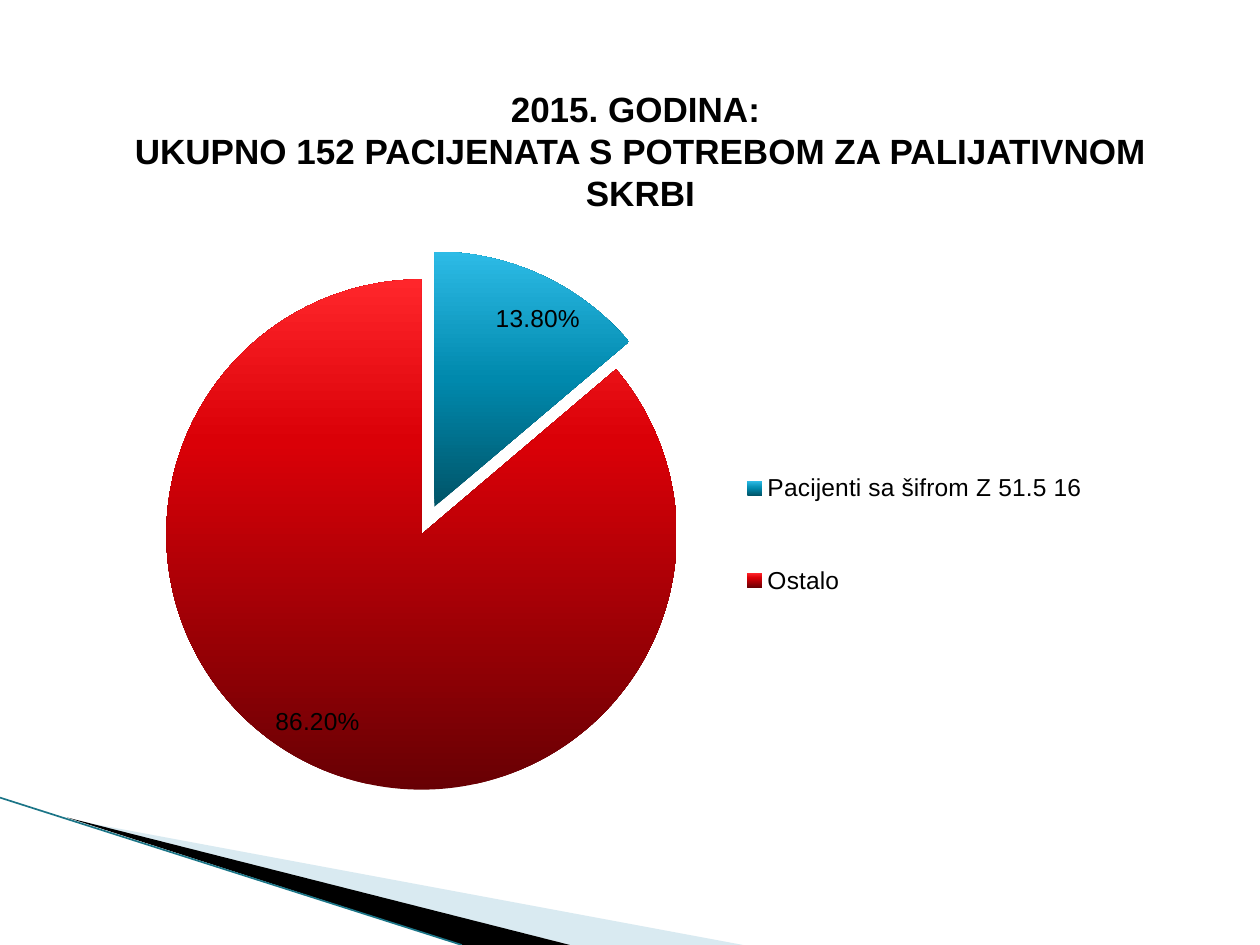
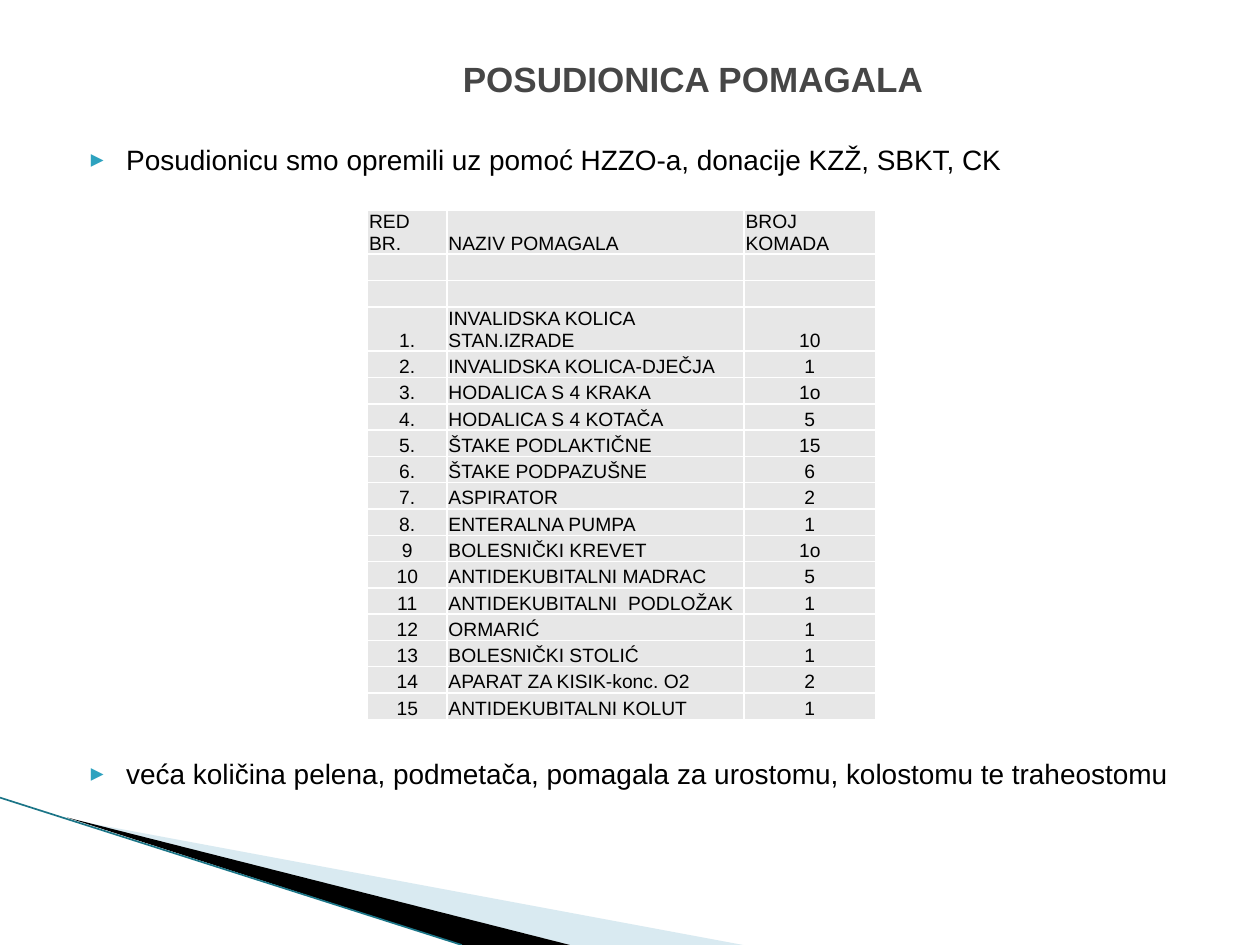
from copy import deepcopy
from dataclasses import dataclass

from lxml import etree
from pptx import Presentation
from pptx.chart.data import CategoryChartData
from pptx.dml.color import RGBColor
from pptx.enum.chart import XL_CHART_TYPE, XL_LABEL_POSITION, XL_LEGEND_POSITION
from pptx.enum.shapes import MSO_CONNECTOR
from pptx.enum.text import MSO_ANCHOR, MSO_AUTO_SIZE, PP_ALIGN
from pptx.oxml.ns import qn
from pptx.util import Cm, Pt

PIE = XL_CHART_TYPE.PIE
BEST_FIT = XL_LABEL_POSITION.BEST_FIT
LEGEND_RIGHT = XL_LEGEND_POSITION.RIGHT
STRAIGHT = MSO_CONNECTOR.STRAIGHT
MIDDLE = MSO_ANCHOR.MIDDLE
TOP = MSO_ANCHOR.TOP
BOTTOM = MSO_ANCHOR.BOTTOM
NO_AUTOFIT = MSO_AUTO_SIZE.NONE
LEFT = PP_ALIGN.LEFT
CENTER = PP_ALIGN.CENTER
TITLE_ONLY = 5
TITLE_AND_CONTENT = 1


@dataclass(frozen=True)
class Theme:
    font: str = "Arial"
    bullet_font: str = "DejaVu Sans Mono"
    title_size: int = 20
    body_size: int = 16
    chart_size: int = 14
    table_size: int = 11
    black: str = "000000"
    gray: str = "464646"
    white: str = "FFFFFF"
    cell: str = "E7E7E7"
    bullet: str = "2DA2BF"
    pale_wedge: str = "A0CBDC"
    edge: str = "1B7587"
    blue_slice: tuple = ((0, "005468"), (0.5, "0089AD"), (1, "2DBBE6"))
    red_slice: tuple = ((0, "680004"), (0.68, "DA0007"), (1, "FF262B"))


THEME = Theme()

AIDS = [
    ("RED BR.", "NAZIV POMAGALA", "BROJ KOMADA"),
    ("", "", ""),
    ("", "", ""),
    ("1.", "INVALIDSKA KOLICA STAN.IZRADE", "10"),
    ("2.", "INVALIDSKA KOLICA-DJEČJA", "1"),
    ("3.", "HODALICA S 4 KRAKA", "1o"),
    ("4.", "HODALICA S 4 KOTAČA", "5"),
    ("5.", "ŠTAKE PODLAKTIČNE", "15"),
    ("6.", "ŠTAKE PODPAZUŠNE", "6"),
    ("7.", "ASPIRATOR", "2"),
    ("8.", "ENTERALNA PUMPA", "1"),
    ("9", "BOLESNIČKI KREVET", "1o"),
    ("10", "ANTIDEKUBITALNI MADRAC", "5"),
    ("11", "ANTIDEKUBITALNI  PODLOŽAK", "1"),
    ("12", "ORMARIĆ", "1"),
    ("13", "BOLESNIČKI STOLIĆ", "1"),
    ("14", "APARAT ZA KISIK-konc. O2", "2"),
    ("15", "ANTIDEKUBITALNI KOLUT", "1"),
]
TWO_LINE_ROWS = (0, 3)


def rgb(color):
    return RGBColor.from_string(color)


def add_xml(parent, tag, **attributes):
    return etree.SubElement(parent, qn(tag), attributes)


def write(para, text, size, color=THEME.black, bold=False, align=LEFT,
          before=0, line_spacing=None):
    para.alignment = align
    para.space_before = Pt(before)
    if line_spacing:
        para.line_spacing = Pt(line_spacing)
    if not text:
        add_xml(para._p, "a:endParaRPr", sz=str(size * 100))
        return
    for number, line in enumerate(text.split("\n")):
        if number:
            para.add_line_break()
        span = para.add_run()
        span.text = line
        span.font.name = THEME.font
        span.font.size = Pt(size)
        span.font.bold = bold
        span.font.color.rgb = rgb(color)


def place(box, left, top, width, height, anchor):
    box.left, box.top = Cm(left), Cm(top)
    box.width, box.height = Cm(width), Cm(height)
    frame = box.text_frame
    frame.word_wrap = True
    frame.auto_size = NO_AUTOFIT
    frame.vertical_anchor = anchor
    return frame


def set_title(page, text, left, top, width, height, color, bottom_inset=0.13):
    frame = place(page.shapes.title, left, top, width, height, MIDDLE)
    frame.margin_bottom = Cm(bottom_inset)
    write(frame.paragraphs[0], text, THEME.title_size, color=color, bold=True,
          align=CENTER, line_spacing=24)


def add_bullet(para):
    settings = para._p.get_or_add_pPr()
    settings.set("marL", str(Cm(1.02)))
    settings.set("indent", str(-Cm(0.71)))
    color = add_xml(settings, "a:buClr")
    add_xml(color, "a:srgbClr", val=THEME.bullet)
    add_xml(settings, "a:buSzPct", val="76000")
    add_xml(settings, "a:buFont", typeface=THEME.bullet_font)
    add_xml(settings, "a:buChar", char="▶")


def set_bullets(page, items):
    frame = place(page.placeholders[1], 1.27, 2.74, 22.86, 13.94, TOP)
    for number, (text, before) in enumerate(items):
        para = frame.add_paragraph() if number else frame.paragraphs[0]
        add_bullet(para)
        write(para, text, THEME.body_size, before=before)


def add_wedge(page, points, color, opacity=100):
    corners = [(Cm(x), Cm(y)) for x, y in points]
    builder = page.shapes.build_freeform(*corners[0])
    builder.add_line_segments(corners[1:], close=True)
    wedge = builder.convert_to_shape()
    wedge.shadow.inherit = False
    wedge.line.fill.background()
    wedge.fill.solid()
    wedge.fill.fore_color.rgb = rgb(color)
    shade = wedge._element.spPr.find(".//" + qn("a:srgbClr"))
    add_xml(shade, "a:alpha", val=str(opacity * 1000))


def add_corner(page):
    add_wedge(page, [(1.4, 16.52), (14.98, 19.05), (11.49, 19.05)],
              THEME.pale_wedge, opacity=40)
    add_wedge(page, [(1.35, 16.48), (11.49, 19.05), (9.31, 19.05)], THEME.black)
    edge = page.shapes.add_connector(STRAIGHT, Cm(0), Cm(16.08), Cm(9.31), Cm(19.05))
    edge.line.color.rgb = rgb(THEME.edge)
    edge.line.width = Pt(0.95)
    add_xml(edge._element.spPr, "a:effectLst")


def add_page(deck, layout):
    page = deck.slides.add_slide(deck.slide_layouts[layout])
    add_corner(page)
    for box in list(page.placeholders):
        page.shapes._spTree.append(box._element)
    return page


def set_layout(parent, index, target=None, **fractions):
    for old in parent.findall(qn("c:layout")):
        parent.remove(old)
    layout = etree.Element(qn("c:layout"))
    manual = add_xml(layout, "c:manualLayout")
    if target:
        add_xml(manual, "c:layoutTarget", val=target)
    for mode in ("xMode", "yMode"):
        add_xml(manual, "c:" + mode, val="edge")
    for name, value in fractions.items():
        add_xml(manual, "c:" + name, val=str(value))
    parent.insert(index, layout)


def fill_slice(point, shades):
    fill = point.format.fill
    fill.gradient()
    fill.gradient_angle = 90
    stops = fill._xPr.find(".//" + qn("a:gsLst"))
    stops.append(deepcopy(stops[0]))
    for stop, (position, color) in zip(fill.gradient_stops, shades):
        stop.position = position
        stop.color.rgb = rgb(color)


def set_font(font, size):
    font.name = THEME.font
    font.size = Pt(size)
    font.color.rgb = rgb(THEME.black)


def add_patient_pie(page):
    data = CategoryChartData(number_format="0.00%")
    data.categories = ["Pacijenti sa šifrom Z 51.5 16", "Ostalo"]
    data.add_series("Series 1", (0.138, 0.862))
    chart = page.shapes.add_chart(
        PIE, Cm(0.84), Cm(4.24), Cm(22.86), Cm(12.57), data).chart
    chart.has_title = False
    set_font(chart.font, THEME.chart_size)

    plot = chart.plots[0]
    plot.vary_by_categories = True
    series = plot.series[0]
    for number, shades in enumerate((THEME.blue_slice, THEME.red_slice)):
        fill_slice(series.points[number], shades)
    patients = series._element.find(qn("c:dPt"))
    explosion = etree.Element(qn("c:explosion"), val="12")
    patients.find(qn("c:spPr")).addprevious(explosion)

    plot.has_data_labels = True
    labels = plot.data_labels
    labels.show_value = True
    labels.show_percentage = False
    labels.number_format = "0.00%"
    labels.number_format_is_linked = False
    labels.position = BEST_FIT
    set_font(labels.font, THEME.chart_size)

    chart.has_legend = True
    legend = chart.legend
    legend.position = LEGEND_RIGHT
    legend.include_in_layout = False
    set_font(legend.font, THEME.chart_size)
    set_layout(legend._element, 1, x=0.59, y=0.32, w=0.36, h=0.4)
    plot_area = chart._chartSpace.find(".//" + qn("c:plotArea"))
    set_layout(plot_area, 0, target="inner", x=0.11, y=0.11, w=0.45, h=0.82)


def set_borders(cell):
    settings = cell._tc.get_or_add_tcPr()
    for number, side in enumerate(("a:lnL", "a:lnR", "a:lnT", "a:lnB")):
        border = etree.Element(qn(side), w=str(Pt(1)))
        solid = add_xml(border, "a:solidFill")
        add_xml(solid, "a:srgbClr", val=THEME.white)
        settings.insert(number, border)


def format_cell(cell, text, align):
    cell.fill.solid()
    cell.fill.fore_color.rgb = rgb(THEME.cell)
    set_borders(cell)
    cell.margin_left = cell.margin_right = cell.margin_top = Cm(0.03)
    cell.margin_bottom = Cm(0)
    cell.vertical_anchor = BOTTOM
    write(cell.text_frame.paragraphs[0], text, THEME.table_size, align=align)


def add_aids_table(page):
    widths = (1.6, 5.99, 2.65)
    heights = [0.89 if number in TWO_LINE_ROWS else 0.53 for number in range(len(AIDS))]
    table = page.shapes.add_table(
        len(AIDS), len(widths), Cm(7.41), Cm(4.23),
        Cm(sum(widths)), Cm(sum(heights))).table
    table.first_row = False
    table.horz_banding = False
    for column, width in zip(table.columns, widths):
        column.width = Cm(width)
    for number, values in enumerate(AIDS):
        table.rows[number].height = Cm(heights[number])
        for position, text in enumerate(values):
            align = CENTER if number and position != 1 else LEFT
            format_cell(table.cell(number, position), text, align)


def main():
    deck = Presentation()
    deck.slide_width, deck.slide_height = Cm(25.4), Cm(19.05)

    page = add_page(deck, TITLE_ONLY)
    add_patient_pie(page)
    set_title(page,
              "2015. GODINA: \nUKUPNO 152 PACIJENATA S POTREBOM ZA PALIJATIVNOM SKRBI",
              1.48, 1.9, 22.86, 3.48, THEME.black, bottom_inset=1.34)

    page = add_page(deck, TITLE_AND_CONTENT)
    set_bullets(page, [
        ("Posudionicu smo opremili uz pomoć HZZO-a, donacije KZŽ, SBKT, CK", 0),
        ("veća količina pelena, podmetača, pomagala za urostomu, kolostomu te traheostomu", 332),
    ])
    set_title(page, "POSUDIONICA POMAGALA", 2.54, 0, 22.86, 3.18, THEME.gray)
    add_aids_table(page)

    deck.save("out.pptx")


if __name__ == "__main__":
    main()
